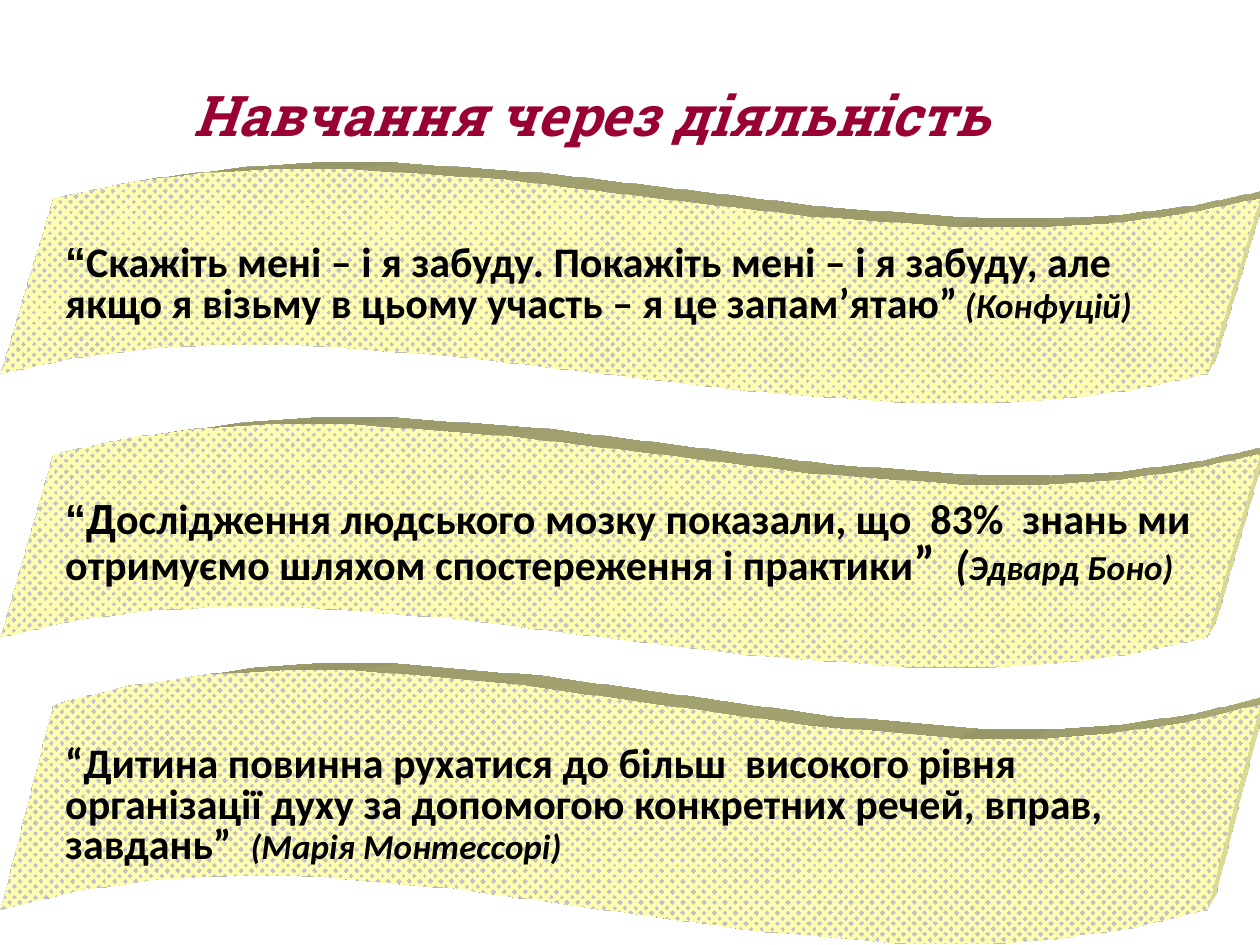
from lxml import etree
from pptx import Presentation
from pptx.dml.color import RGBColor
from pptx.enum.dml import MSO_PATTERN
from pptx.enum.shapes import MSO_SHAPE
from pptx.enum.text import MSO_ANCHOR, PP_ALIGN
from pptx.oxml import parse_xml
from pptx.oxml.ns import nsdecls
from pptx.util import Inches, Pt

COLORS = {"title": "990033", "text": "000000", "banner": "FFFEB0", "weave": "FFFFFF"}

BANNERS = [
    (1.33, 1.88, [
        ("“", "Arial", 24, False),
        ("Скажіть мені – і я забуду. Покажіть мені – і я забуду, але "
         "якщо я візьму в цьому участь – я це запам’ятаю”", "Calibri", 24, False),
        (" ", "Calibri", 18, True),
        ("(Конфуцій)", "Calibri", 20, True),
    ]),
    (3.36, 1.95, [
        ("“Д", "Arial", 24, False),
        ("ослідження людського мозку показали, що  83%  знань ми "
         "отримуємо шляхом спостереження і практики", "Calibri", 24, False),
        ("” ", "Calibri", 28, False),
        (" (", "Calibri", 24, True),
        ("Эдвард Боно)", "Calibri", 20, True),
    ]),
    (5.31, 2.19, [
        ("“Дитина повинна рухатися до більш  високого рівня організації духу "
         "за допомогою конкретних речей, вправ, завдань”  ", "Calibri", 24, False),
        ("(Марія Монтессорі)", "Calibri", 20, True),
    ]),
]


def color(name):
    return RGBColor.from_string(COLORS[name])


def add_title(slide, text):
    box = slide.shapes.add_textbox(Inches(1.44), Inches(0.64), Inches(8.4), Inches(0.6))
    frame = box.text_frame
    frame.word_wrap = True
    frame.margin_top = frame.margin_bottom = 0
    paragraph = frame.paragraphs[0]
    paragraph.text = text
    font = paragraph.font
    font.name, font.size = "Roboto Slab", Pt(32)
    font.bold = font.italic = True
    font.color.rgb = color("title")


def extrude(shape):
    properties = shape._element.spPr
    properties.append(parse_xml(
        f'<a:scene3d {nsdecls("a")}><a:camera prst="legacyPerspectiveTopRight"/>'
        '<a:lightRig rig="legacyFlat3" dir="b"/></a:scene3d>'))
    depth = etree.SubElement(properties, properties[-1].tag.replace("scene3d", "sp3d"))
    depth.set("extrusionH", str(Inches(0.47)))
    depth.set("prstMaterial", "legacyMatte")
    depth.append(parse_xml(
        f'<a:extrusionClr {nsdecls("a")}><a:srgbClr val="{COLORS["banner"]}"/></a:extrusionClr>'))


def add_banner(slide, top, height, runs):
    shape = slide.shapes.add_shape(MSO_SHAPE.WAVE, 0, Inches(top), Inches(10), Inches(height))
    shape.adjustments[0] = 0.13
    shape.adjustments[1] = -0.021
    shape.shadow.inherit = False
    shape.line.fill.background()
    shape.fill.patterned()
    shape.fill.pattern = MSO_PATTERN.WEAVE
    shape.fill.fore_color.rgb = color("banner")
    shape.fill.back_color.rgb = color("weave")
    extrude(shape)
    frame = shape.text_frame
    frame.word_wrap = True
    frame.vertical_anchor = MSO_ANCHOR.MIDDLE
    paragraph = frame.paragraphs[0]
    paragraph.alignment = PP_ALIGN.LEFT
    paragraph.line_spacing = 0.8
    paragraph.font.bold = True
    paragraph.font.color.rgb = color("text")
    for text, name, size, italic in runs:
        run = paragraph.add_run()
        run.text = text
        run.font.name, run.font.size = name, Pt(size)
        run.font.italic = italic
        run.font.color.rgb = color("text")


def main():
    presentation = Presentation()
    presentation.slide_width, presentation.slide_height = Inches(10), Inches(7.5)
    slide = presentation.slides.add_slide(presentation.slide_layouts[6])
    add_title(slide, "Навчання через діяльність")
    for top, height, runs in BANNERS:
        add_banner(slide, top, height, runs)
    presentation.save("out.pptx")


if __name__ == "__main__":
    main()
